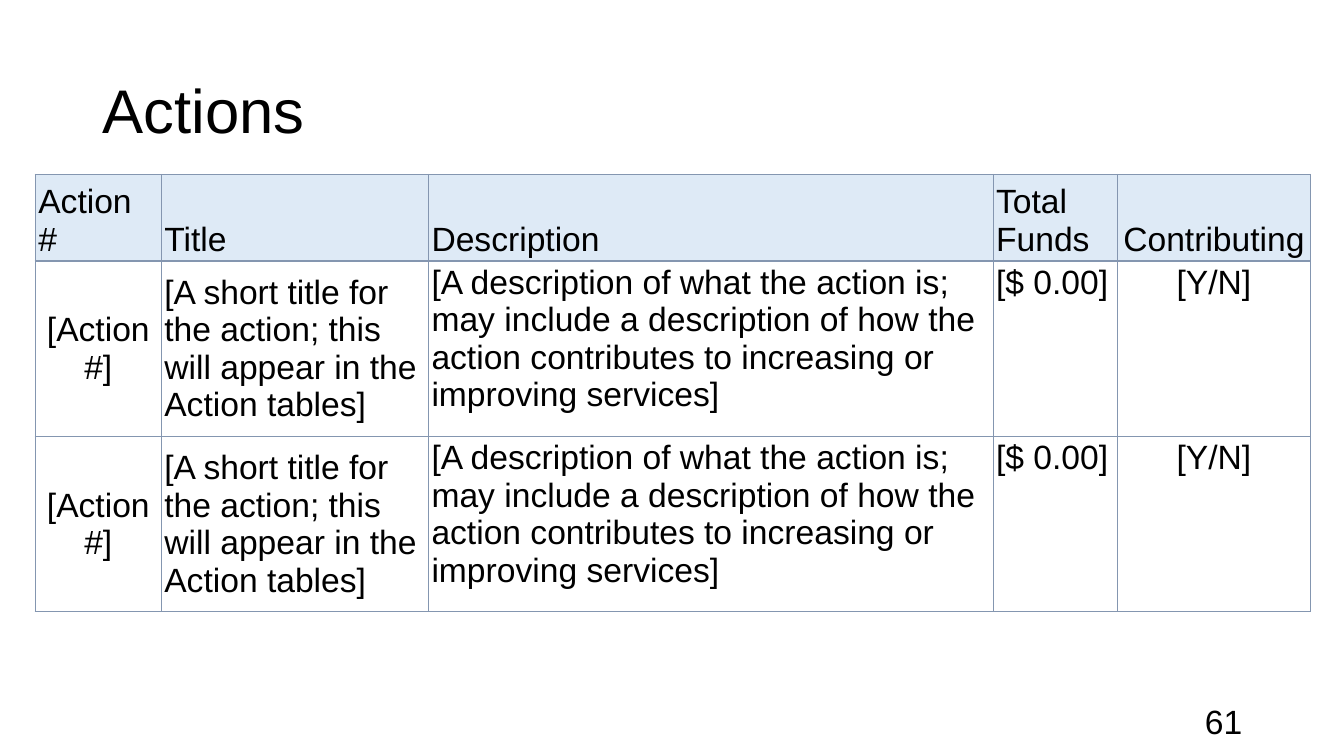
from pptx import Presentation
from pptx import util as u
from pptx.dml.color import RGBColor
from pptx.enum import text
from pptx.oxml import parse_xml
from pptx.oxml.ns import nsdecls

LEFT, MID = text.PP_ALIGN.LEFT, text.PP_ALIGN.CENTER
RIGHT = text.PP_ALIGN.RIGHT
TOP, MIDDLE = text.MSO_ANCHOR.TOP, text.MSO_ANCHOR.MIDDLE
BOTTOM = text.MSO_ANCHOR.BOTTOM

TITLE = "Actions"
NUMBER = "61"
# heading, width, heading alignment, body text, body alignment, body anchor
COLUMNS = [
    ("Action #", 1.25, LEFT, "[Action #]", MID, MIDDLE),
    ("Title", 2.65, LEFT,
     "[A short title for the action; this will appear in the Action tables]",
     LEFT, MIDDLE),
    ("Description", 5.6, LEFT,
     "[A description of what the action is; may include a description of how "
     "the action contributes to increasing or improving services]",
     LEFT, TOP),
    ("Total Funds", 1.23, LEFT, "[$ 0.00]", LEFT, TOP),
    ("Contributing", 1.92, MID, "[Y/N]", MID, TOP),
]
HEIGHTS = [0.7, 1.74, 1.74]

THEME = {
    "font": "Arial", "title": 44, "body": 24,
    "ink": "000000", "head": "DEEAF6", "plain": "FFFFFF", "rule": "8496B0",
}


def write(frame, words, size, align):
    frame.text = words
    para = frame.paragraphs[0]
    para.alignment = align
    font = para.runs[0].font
    font.name, font.size = THEME["font"], u.Pt(size)
    font.color.rgb = RGBColor.from_string(THEME["ink"])
    return para


def add_text(slide, box, words, size, align):
    frame = slide.shapes.add_textbox(*map(u.Inches, box)).text_frame
    frame.word_wrap = True
    frame.vertical_anchor = MIDDLE
    return write(frame, words, size, align)


def rule(cell):
    """Draw a thin line on all four sides of a cell."""
    props = cell._tc.get_or_add_tcPr()
    for side in ("lnL", "lnR", "lnT", "lnB"):
        props.append(parse_xml(
            f'<a:{side} {nsdecls("a")} w="{u.Pt(1)}"><a:solidFill>'
            f'<a:srgbClr val="{THEME["rule"]}"/></a:solidFill></a:{side}>'))


def fill_cell(cell, words, align, anchor, color):
    rule(cell)
    cell.fill.solid()
    cell.fill.fore_color.rgb = RGBColor.from_string(color)
    cell.margin_left = cell.margin_right = u.Inches(0.03)
    cell.margin_top = cell.margin_bottom = u.Inches(0.03)
    cell.vertical_anchor = anchor
    para = write(cell.text_frame, words, THEME["body"], align)
    para.space_after = u.Pt(6)


def add_grid(slide):
    wide = sum(col[1] for col in COLUMNS)
    box = (0.35, 1.73, wide, sum(HEIGHTS))
    grid = slide.shapes.add_table(
        len(HEIGHTS), len(COLUMNS), *map(u.Inches, box)).table
    grid.first_row = grid.horz_banding = False
    for row, high in zip(grid.rows, HEIGHTS):
        row.height = u.Inches(high)
    for c, (head, width, side, body, align, anchor) in enumerate(COLUMNS):
        grid.columns[c].width = u.Inches(width)
        fill_cell(grid.cell(0, c), head, side, BOTTOM, THEME["head"])
        for r in range(1, len(HEIGHTS)):
            fill_cell(grid.cell(r, c), body, align, anchor, THEME["plain"])


def main():
    deck = Presentation()
    deck.slide_width, deck.slide_height = u.Inches(13.33), u.Inches(7.5)
    slide = deck.slides.add_slide(deck.slide_layouts[6])
    title = add_text(slide, (0.92, 0.4, 11.5, 1.45), TITLE,
                     THEME["title"], LEFT)
    title.line_spacing = 0.9
    add_grid(slide)
    add_text(slide, (9.42, 6.95, 3, 0.4), NUMBER, THEME["body"], RIGHT)
    deck.save("out.pptx")


if __name__ == "__main__":
    main()
